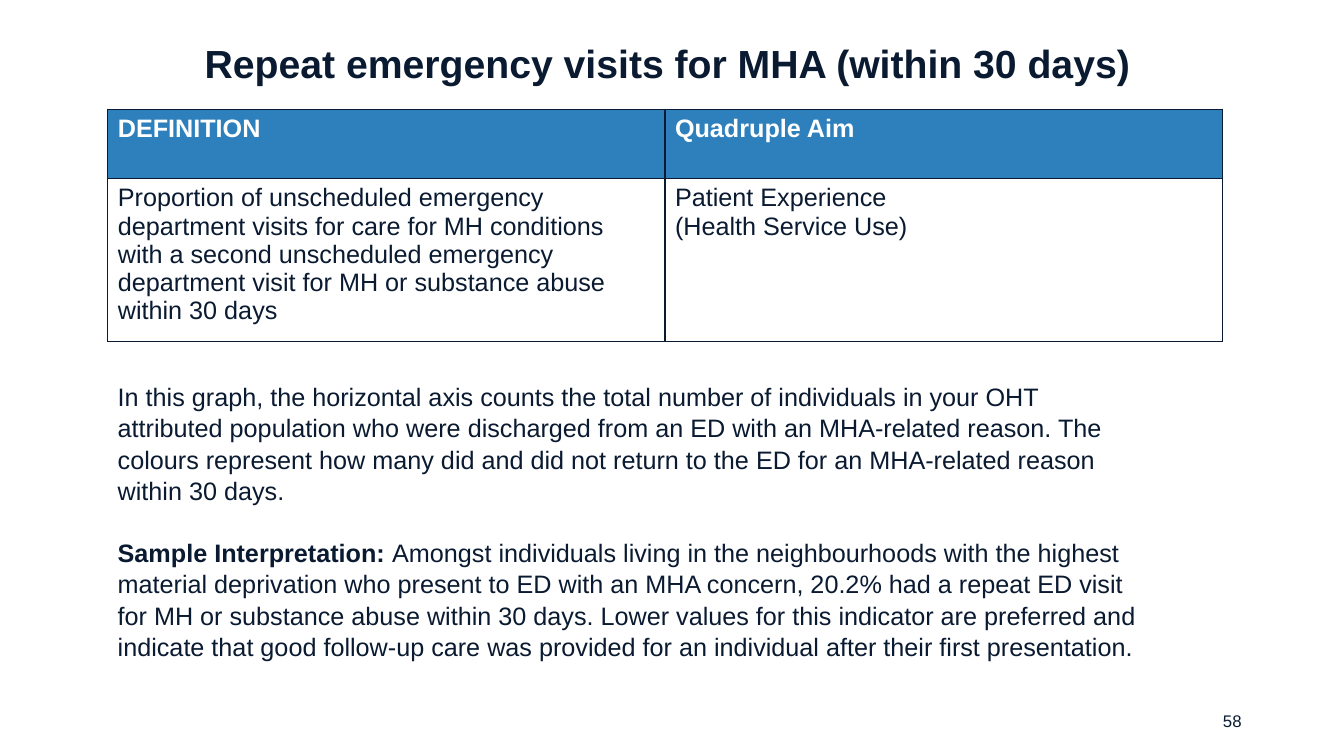
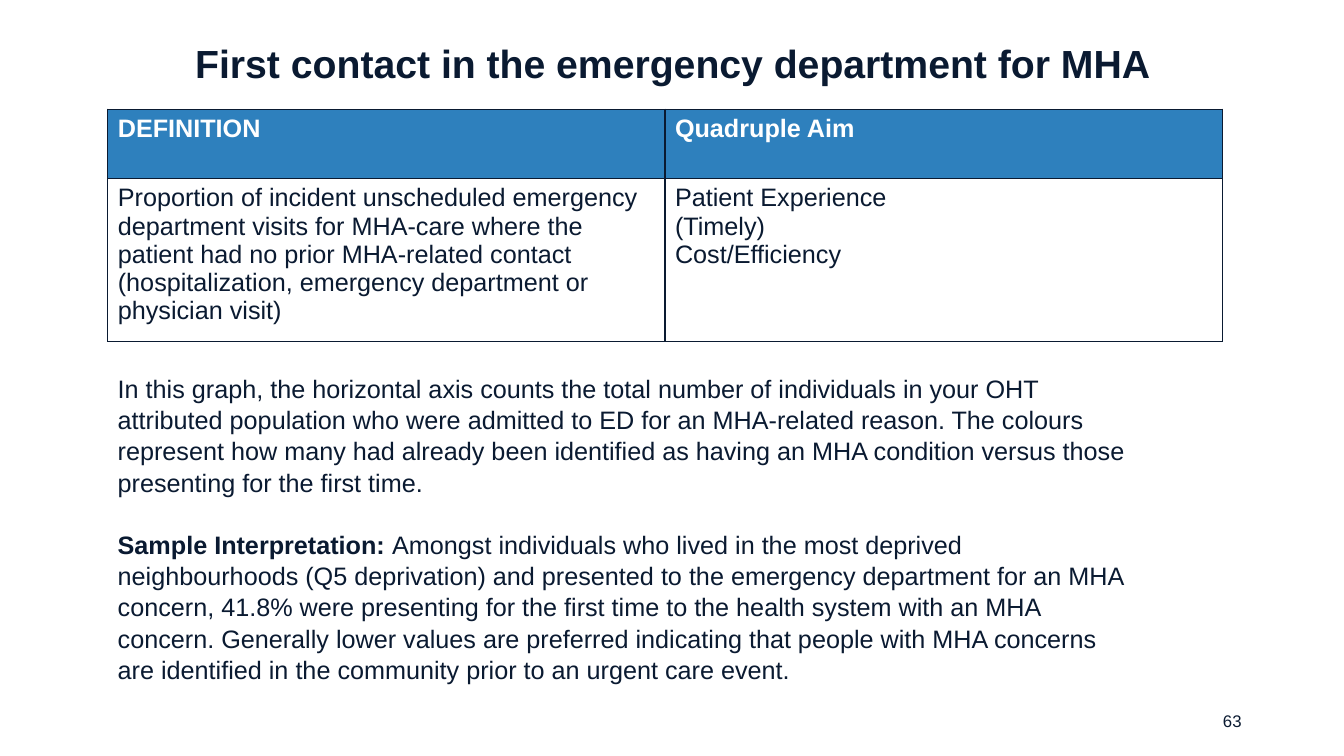
import dataclasses
import pptx
import pptx.util
import pptx.dml.color
import pptx.enum.text
import pptx.oxml

Pt = pptx.util.Pt
Rgb = pptx.dml.color.RGBColor.from_string
Align = pptx.enum.text.PP_ALIGN
Anchor = pptx.enum.text.MSO_ANCHOR
NS = 'xmlns:a="http://schemas.openxmlformats.org/drawingml/2006/main"'


@dataclasses.dataclass(frozen=True)
class Theme:
    ink: str = "0A1A31"
    blue: str = "2E80BD"
    white: str = "FFFFFF"
    font: str = "Arial"
    head: int = 28
    body: int = 18
    foot: int = 12
    line: int = 1


@dataclasses.dataclass(frozen=True)
class Page:
    title: str
    number: str
    meaning: str
    aims: tuple
    top: int
    graph: str
    sample: str


theme = Theme()
LABEL = "Sample Interpretation: "
TITLE = (55.5, 17, 850, 60.5)
TABLE = (77, 78, 796, 166)
NUMBER = (678, 500, 216, 29)

PAGES = [
    Page(
        title="Repeat emergency visits for MHA (within 30 days) ",
        number="58",
        meaning="Proportion of unscheduled emergency department visits for care "
                "for MH conditions with a second unscheduled emergency department "
                "visit for MH or substance abuse within 30 days",
        aims=("Patient Experience", "(Health Service Use)"),
        top=268,
        graph="In this graph, the horizontal axis counts the total number of "
              "individuals in your OHT attributed population who were discharged "
              "from an ED with an MHA-related reason. The colours represent how "
              "many did and did not return to the ED for an MHA-related reason "
              "within 30 days.",
        sample="Amongst individuals living in the neighbourhoods with the highest "
               "material deprivation who present to ED with an MHA concern, 20.2% "
               "had a repeat ED visit for MH or substance abuse within 30 days. "
               "Lower values for this indicator are preferred and indicate that "
               "good follow-up care was provided for an individual after their "
               "first presentation. ",
    ),
    Page(
        title="First contact in the emergency department for MHA",
        number="63",
        meaning="Proportion of incident unscheduled emergency department visits "
                "for MHA-care where the patient had no prior MHA-related contact "
                "(hospitalization, emergency department or physician visit)",
        aims=("Patient Experience", "(Timely)", "Cost/Efficiency"),
        top=262,
        graph="In this graph, the horizontal axis counts the total number of "
              "individuals in your OHT attributed population who were admitted to "
              "ED for an MHA-related reason. The colours represent how many had "
              "already been identified as having an MHA condition versus those "
              "presenting for the first time.",
        sample="Amongst individuals who lived in the most deprived neighbourhoods "
               "(Q5 deprivation) and presented to the emergency department for an "
               "MHA concern, 41.8% were presenting for the first time to the "
               "health system with an MHA concern. Generally lower values are "
               "preferred indicating that people with MHA concerns are identified "
               "in the community prior to an urgent care event.",
    ),
]


def style(para, size, color=theme.ink, bold=None):
    font = para.font
    font.name, font.size, font.bold = theme.font, Pt(size), bold
    font.color.rgb = Rgb(color)


def add_title(slide, box, text):
    shape = slide.shapes.title
    shape.left, shape.top, shape.width, shape.height = map(Pt, box)
    frame = shape.text_frame
    frame.word_wrap = True
    frame.vertical_anchor = Anchor.MIDDLE
    frame.text = text
    para = frame.paragraphs[0]
    para.alignment = Align.CENTER
    para.line_spacing = 0.9
    style(para, theme.head, bold=True)


def add_frame(slide, box):
    frame = slide.shapes.add_textbox(*map(Pt, box)).text_frame
    frame.word_wrap = True
    return frame


def add_number(slide, box, text):
    frame = add_frame(slide, box)
    frame.vertical_anchor = Anchor.MIDDLE
    frame.text = text
    para = frame.paragraphs[0]
    para.alignment = Align.RIGHT
    style(para, theme.foot)


def add_edges(cell):
    props = cell._tc.get_or_add_tcPr()
    for spot, side in enumerate(("lnL", "lnR", "lnT", "lnB")):
        props.insert(spot, pptx.oxml.parse_xml(
            f'<a:{side} {NS} w="{Pt(theme.line)}"><a:solidFill>'
            f'<a:srgbClr val="{theme.ink}"/></a:solidFill></a:{side}>'))


def fill_cell(cell, text, fill, color, bold):
    cell.fill.solid()
    cell.fill.fore_color.rgb = Rgb(fill)
    cell.text_frame.text = text
    for para in cell.text_frame.paragraphs:
        style(para, theme.body, color, bold)
    add_edges(cell)


def add_table(slide, box, page):
    left, top, width, height = box
    table = slide.shapes.add_table(2, 2, *map(Pt, box)).table
    table.horz_banding = False
    for col in table.columns:
        col.width = Pt(width / 2)
    table.rows[0].height = Pt(height * 0.3)
    table.rows[1].height = Pt(height * 0.7)
    heads = ("DEFINITION", "Quadruple Aim")
    facts = (page.meaning, "\n".join(page.aims))
    for col, (head, fact) in enumerate(zip(heads, facts)):
        fill_cell(table.cell(0, col), head, theme.blue, theme.white, True)
        fill_cell(table.cell(1, col), fact, theme.white, theme.ink, False)


def add_notes(slide, box, page):
    frame = add_frame(slide, box)
    graph = frame.paragraphs[0]
    graph.text = page.graph
    sample = frame.add_paragraph()
    sample.add_run().text = LABEL
    sample.runs[0].font.bold = True
    sample.add_run().text = page.sample
    sample.space_before = Pt(21.6)
    for para in (graph, sample):
        para.line_spacing = 1.04
        style(para, theme.body)


def add_page(deck, page):
    slide = deck.slides.add_slide(deck.slide_layouts[5])
    add_title(slide, TITLE, page.title)
    add_table(slide, TABLE, page)
    add_notes(slide, (77, page.top, 743, 225), page)
    add_number(slide, NUMBER, page.number)


def main():
    deck = pptx.Presentation()
    deck.slide_width, deck.slide_height = Pt(960), Pt(540)
    for page in PAGES:
        add_page(deck, page)
    deck.save("out.pptx")


if __name__ == "__main__":
    main()
